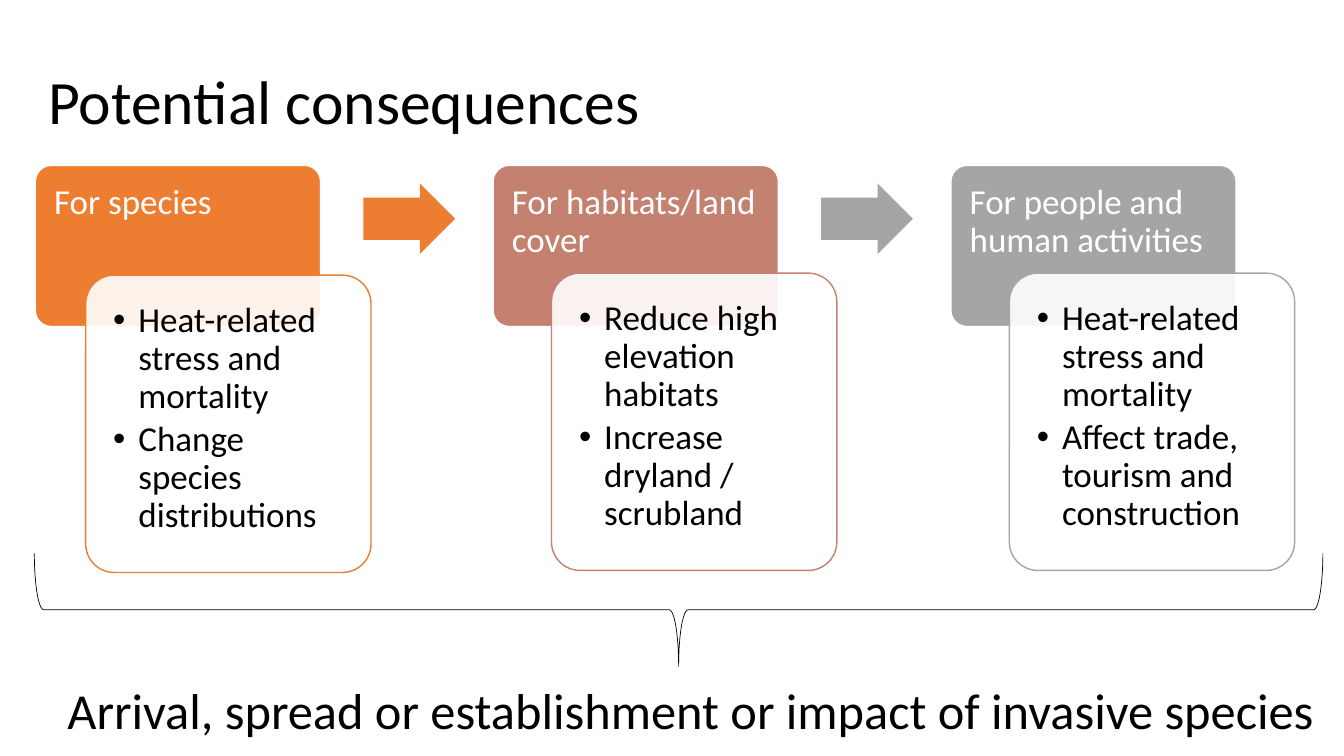
from lxml.etree import SubElement
from pptx import Presentation
from pptx.dml.color import RGBColor
from pptx.enum.shapes import MSO_SHAPE
from pptx.enum.text import MSO_ANCHOR, PP_ALIGN
from pptx.oxml.ns import qn
from pptx.util import Inches, Pt

ORANGE, ROSE, GRAY = "ED7D31", "C48170", "A5A5A5"
BLACK, WHITE = "000000", "FFFFFF"

STAGE_LEFT, STAGE_STEP = 2.63, 34.06
STAGE_TOP, STAGE_WIDTH = 21.87, 21.23
STAGES = [
    ("For species", ORANGE, ORANGE, 3.75, 36.4,
     ["Heat-related stress and mortality", "Change species distributions"]),
    ("For habitats/land cover", ROSE, GRAY, 4.35, 36.13,
     ["Reduce high elevation habitats", "Increase dryland / scrubland"]),
    ("For people and human activities", GRAY, None, 4.35, 36.13,
     ["Heat-related stress and mortality", "Affect trade, tourism and construction"]),
]


def color(value):
    return RGBColor.from_string(value)


class SlideBuilder:
    """Draws styled elements on a grid of 100 columns by 100 rows."""

    font_name = "Calibri"

    def __init__(self, presentation):
        self.column = presentation.slide_width / 100
        self.row = presentation.slide_height / 100
        self.slide = presentation.slides.add_slide(presentation.slide_layouts[6])

    def box(self, left, top, width, height):
        return (round(left * self.column), round(top * self.row),
                round(width * self.column), round(height * self.row))

    def shape(self, kind, area, fill=None, line=None, line_width=1, adjustments=()):
        shape = self.slide.shapes.add_shape(kind, *self.box(*area))
        shape.shadow.inherit = False
        for index, value in enumerate(adjustments):
            shape.adjustments[index] = value
        if fill:
            shape.fill.solid()
            shape.fill.fore_color.rgb = color(fill)
        else:
            shape.fill.background()
        if line:
            shape.line.color.rgb = color(line)
            shape.line.width = Pt(line_width)
        else:
            shape.line.fill.background()
        return shape

    def fill_text(self, frame, texts, size, ink, spacing=1.0, after=0, bullets=False):
        frame.word_wrap = True
        for index, text in enumerate(texts):
            paragraph = frame.paragraphs[0] if index == 0 else frame.add_paragraph()
            paragraph.text = text
            if bullets:
                self.bullet(paragraph)
            paragraph.alignment = PP_ALIGN.LEFT
            paragraph.line_spacing = spacing
            paragraph.space_after = Pt(after)
            paragraph.font.name = self.font_name
            paragraph.font.size = Pt(size)
            paragraph.font.color.rgb = color(ink)

    def bullet(self, paragraph):
        properties = paragraph._p.get_or_add_pPr()
        properties.set("marL", str(Inches(0.25)))
        properties.set("indent", str(-Inches(0.25)))
        SubElement(properties, qn("a:buFont")).set("typeface", "Arial")
        SubElement(properties, qn("a:buChar")).set("char", "•")

    def text(self, area, text, size, spacing=1.0, anchor=MSO_ANCHOR.TOP):
        frame = self.slide.shapes.add_textbox(*self.box(*area)).text_frame
        frame.vertical_anchor = anchor
        self.fill_text(frame, [text], size, BLACK, spacing)

    def panel(self, area, texts, fill, line, ink, inset, after=0, bullets=False):
        shape = self.shape(MSO_SHAPE.ROUNDED_RECTANGLE, area, fill, line,
                           adjustments=[0.1])
        frame = shape.text_frame
        frame.vertical_anchor = MSO_ANCHOR.TOP
        frame.margin_left = frame.margin_right = frame.margin_top = Inches(inset)
        self.fill_text(frame, texts, 25, ink, 0.9, after, bullets)
        return shape

    def card(self, area, texts, line):
        shape = self.panel(area, texts, WHITE, line, BLACK, 0.19, 4, True)
        fill_color = shape._element.spPr.find(qn("a:solidFill"))[0]
        SubElement(fill_color, qn("a:alpha")).set("val", "90000")

    def arrow(self, area, fill):
        self.shape(MSO_SHAPE.RIGHT_ARROW, area, fill, adjustments=[0.6, 0.5])

    def brace(self, area):
        shape = self.shape(MSO_SHAPE.RIGHT_BRACE, area, line=BLACK, line_width=0.5)
        shape.rotation = 90


def main():
    presentation = Presentation()
    presentation.slide_width, presentation.slide_height = Inches(13.33), Inches(7.5)
    builder = SlideBuilder(presentation)

    builder.text((2.85, 2.8, 97.15, 22.13), "Potential consequences", 44, 0.9,
                 MSO_ANCHOR.MIDDLE)
    for index, (heading, tint, arrow_tint, shift, card_top, points) in enumerate(STAGES):
        left = STAGE_LEFT + index * STAGE_STEP
        builder.panel((left, STAGE_TOP, STAGE_WIDTH, 21.33), [heading],
                      tint, WHITE, WHITE, 0.14)
        builder.card((left + shift, card_top, STAGE_WIDTH, 39.33), points, tint)
        if arrow_tint:
            builder.arrow((left + 24.4, 24.27, 6.83, 9.33), arrow_tint)
    builder.brace((46.29, -4.53, 8.4, 170.4))
    builder.text((4.28, 89.2, 94.3, 9.47),
                 "Arrival, spread or establishment or impact of invasive species", 36)
    presentation.save("out.pptx")


if __name__ == "__main__":
    main()
